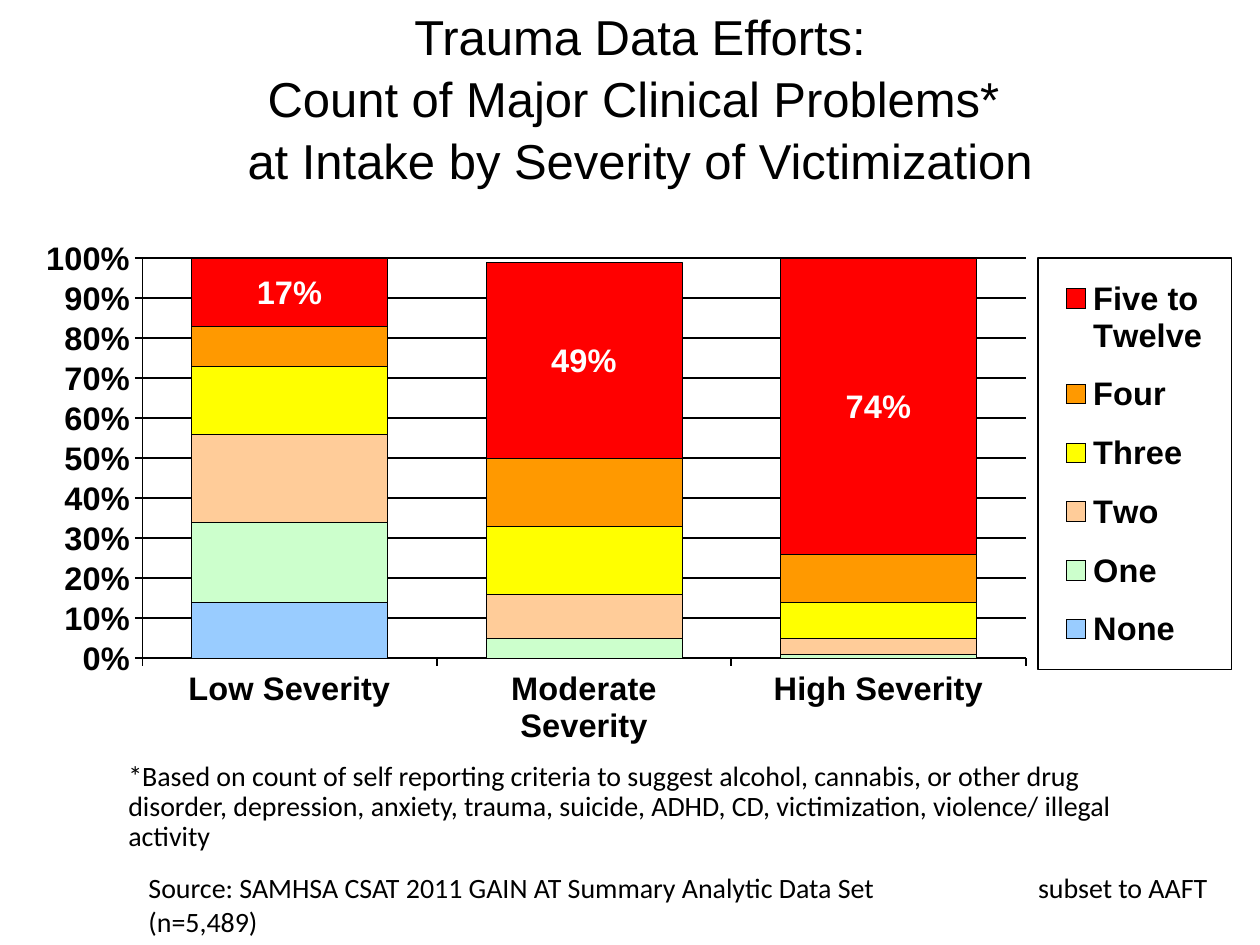
from lxml import etree
from pptx import Presentation
from pptx.chart.data import CategoryChartData
from pptx.dml.color import RGBColor
from pptx.enum.chart import XL_CHART_TYPE, XL_LEGEND_POSITION, XL_TICK_MARK
from pptx.enum.text import MSO_ANCHOR, PP_ALIGN
from pptx.oxml.ns import qn
from pptx.util import Inches, Pt

CATEGORIES = ["Low Severity", "Moderate Severity", "High Severity"]
SERIES = [
    ("None", (0.14, 0, 0), "99CCFF"),
    ("One", (0.2, 0.05, 0.01), "CCFFCC"),
    ("Two", (0.22, 0.11, 0.04), "FFCC99"),
    ("Three", (0.17, 0.17, 0.09), "FFFF00"),
    ("Four", (0.1, 0.17, 0.12), "FF9900"),
    ("Five to Twelve", (0.17, 0.49, 0.74), "FF0000"),
]


def rgb(color):
    return RGBColor.from_string(color)


def style_font(font, size, name="Arial", color="000000", bold=False):
    font.size = Pt(size)
    font.name = name
    font.bold = bold
    font.color.rgb = rgb(color)


def style_line(line, width, color="000000"):
    line.width = Pt(width)
    line.color.rgb = rgb(color)


def set_layout(parent, index, x, y, w, h, inner=False):
    """Fix the position of a chart part as fractions of the chart area."""
    for old in parent.findall(qn("c:layout")):
        parent.remove(old)
    layout = etree.Element(qn("c:layout"))
    manual = etree.SubElement(layout, qn("c:manualLayout"))
    values = [("xMode", "edge"), ("yMode", "edge"), ("x", x), ("y", y), ("w", w), ("h", h)]
    if inner:
        values.insert(0, ("layoutTarget", "inner"))
    for tag, value in values:
        etree.SubElement(manual, qn(f"c:{tag}")).set("val", str(value))
    parent.insert(index, layout)


def add_title(s, box):
    title = s.shapes.title
    title.left, title.top, title.width, title.height = box
    tf = title.text_frame
    tf.word_wrap = True
    tf.vertical_anchor = MSO_ANCHOR.MIDDLE
    tf.text = "Trauma Data Efforts:"
    tf.add_paragraph().text = (
        "Count of Major Clinical Problems* \vat Intake by Severity of Victimization")
    for p in tf.paragraphs:
        p.alignment = PP_ALIGN.CENTER
        p.line_spacing = 1.05
        p.space_before = Pt(0)
        for r in p.runs:
            style_font(r.font, 28)


def add_problem_chart(s, box):
    data = CategoryChartData(number_format="0%")
    data.categories = CATEGORIES
    for name, values, _ in SERIES:
        data.add_series(name, values)
    chart = s.shapes.add_chart(XL_CHART_TYPE.COLUMN_STACKED, *box, data).chart
    chart.has_title = False
    style_font(chart.font, 18.6, bold=True)
    set_layout(chart.plots[0]._element.getparent(), 0, 0.1, 0.05, 0.73, 0.72, inner=True)

    # Axes
    for axis in (chart.category_axis, chart.value_axis):
        axis.major_tick_mark = XL_TICK_MARK.OUTSIDE
        style_font(axis.tick_labels.font, 18.6, bold=True)
        style_line(axis.format.line, 1)
    value_axis = chart.value_axis
    value_axis.minimum_scale, value_axis.maximum_scale = 0, 1
    value_axis.major_unit = 0.1
    value_axis.tick_labels.number_format = "0%"
    value_axis.tick_labels.number_format_is_linked = False
    style_line(value_axis.major_gridlines.format.line, 0.93)

    # Columns
    plot = chart.plots[0]
    plot.gap_width, plot.overlap = 50, 100
    plot.vary_by_categories = False
    for series, (_, _, color) in zip(plot.series, SERIES):
        series.format.fill.solid()
        series.format.fill.fore_color.rgb = rgb(color)
        style_line(series.format.line, 0.25)
    labels = plot.series[-1].data_labels
    labels.show_value = True
    labels.number_format = "0%"
    labels.number_format_is_linked = False
    style_font(labels.font, 18.6, color="FFFFFF", bold=True)

    # Legend with a frame
    chart.has_legend = True
    legend = chart.legend
    legend.position = XL_LEGEND_POSITION.RIGHT
    legend.include_in_layout = False
    style_font(legend.font, 18.6, bold=True)
    element = legend._element
    set_layout(element, 1, 0.84, 0.05, 0.16, 0.74)
    frame = etree.Element(qn("c:spPr"))
    line = etree.SubElement(frame, qn("a:ln"), w=str(Pt(1)))
    fill = etree.SubElement(line, qn("a:solidFill"))
    etree.SubElement(fill, qn("a:srgbClr"), val="000000")
    element.find(qn("c:txPr")).addprevious(frame)


def add_note(s, box, text, line_spacing=1.0, tab=None):
    tf = s.shapes.add_textbox(*box).text_frame
    tf.word_wrap = True
    p = tf.paragraphs[0]
    p.text = text
    p.line_spacing = line_spacing
    if tab is not None:
        tabs = etree.SubElement(p._p.get_or_add_pPr(), qn("a:tabLst"))
        etree.SubElement(tabs, qn("a:tab"), pos=str(tab), algn="l")
    for r in p.runs:
        style_font(r.font, 16, name="Calibri")


def main():
    prs = Presentation()
    prs.slide_width, prs.slide_height = Inches(10), Inches(7.5)
    s = prs.slides.add_slide(prs.slide_layouts[5])
    add_title(s, (Inches(0.58), Inches(0.02), Inches(9), Inches(1.49)))
    add_problem_chart(s, (Inches(0.17), Inches(1.83), Inches(9.61), Inches(4.41)))
    # Source and footnote
    add_note(s, (Inches(1.08), Inches(6.86), Inches(8.92), Inches(0.64)),
             "Source: SAMHSA CSAT 2011 GAIN AT Summary Analytic Data Set\tsubset to AAFT (n=5,489)",
             tab=Inches(7.06))
    add_note(s, (Inches(0.92), Inches(6), Inches(8.15), Inches(0.82)),
             "*Based on count of self reporting criteria to suggest alcohol, cannabis, or other drug "
             "disorder, depression, anxiety, trauma, suicide, ADHD, CD, victimization, violence/ "
             "illegal activity", line_spacing=0.9)
    prs.save("out.pptx")


if __name__ == "__main__":
    main()
